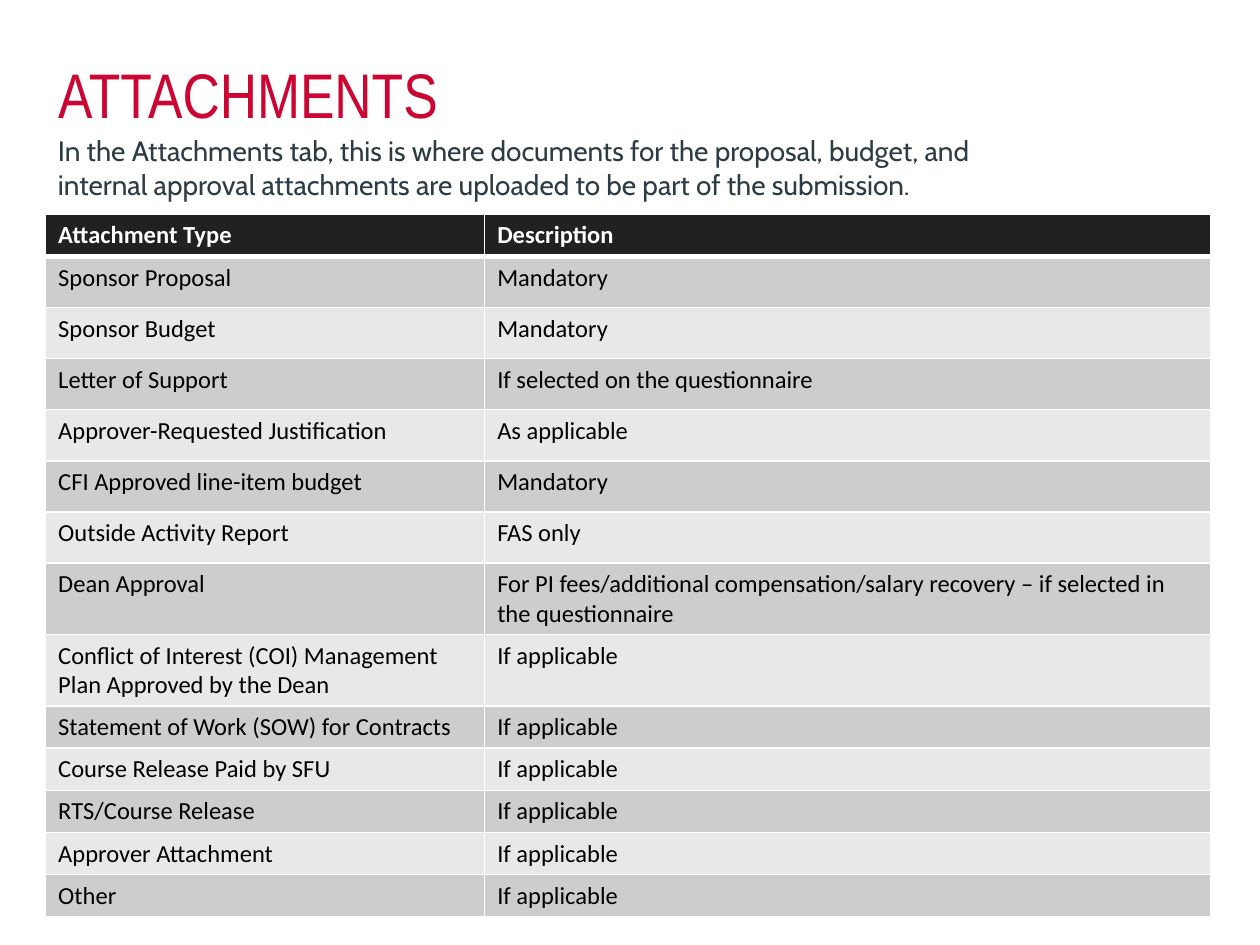
from lxml import etree
from pptx import Presentation
from pptx.dml.color import RGBColor
from pptx.enum.text import MSO_ANCHOR as Anchor, PP_ALIGN as Align
from pptx.oxml.ns import qn
from pptx.util import Cm, Pt

COLORS = {
    "red": "CC0633", "slate": "2D3B45", "black": "000000", "white": "FFFFFF",
    "header": "212121", "dark": "CDCDCD", "light": "E8E8E8",
}
SHORT, TALL, DOUBLE = 0.85, 1.03, 1.44
ROWS = [
    ("Attachment Type", "Description", SHORT),
    ("Sponsor Proposal", "Mandatory", TALL),
    ("Sponsor Budget", "Mandatory", TALL),
    ("Letter of Support", "If selected on the questionnaire", TALL),
    ("Approver-Requested Justification", "As applicable", TALL),
    ("CFI Approved line-item budget", "Mandatory", TALL),
    ("Outside Activity Report", "FAS only", TALL),
    ("Dean Approval", "For PI fees/additional compensation/salary recovery – "
     "if selected in the questionnaire", DOUBLE),
    ("Conflict of Interest (COI) Management Plan Approved by the Dean",
     "If applicable", DOUBLE),
    ("Statement of Work (SOW) for Contracts", "If applicable", SHORT),
    ("Course Release Paid by SFU", "If applicable", SHORT),
    ("RTS/Course Release", "If applicable", SHORT),
    ("Approver Attachment", "If applicable", SHORT),
    ("Other", "If applicable", SHORT),
]


def rgb(name):
    return RGBColor.from_string(COLORS[name])


def write(tf, text, font="Calibri", size=14, color="black", bold=False, spacing=None):
    tf.word_wrap = True
    p = tf.paragraphs[0]
    p.alignment = Align.LEFT
    if spacing:
        p.line_spacing = spacing
    r = p.add_run()
    r.text = text
    r.font.name, r.font.size, r.font.bold = font, Pt(size), bold
    r.font.color.rgb = rgb(color)


def set_borders(cell, bottom=1):
    """Draw white lines round a cell; they must precede its fill in the XML."""
    props = cell._tc.get_or_add_tcPr()
    for i, (side, width) in enumerate(zip("LRTB", (1, 1, 1, bottom))):
        ln = etree.Element(qn(f"a:ln{side}"), w=str(Pt(width)))
        fill = etree.SubElement(ln, qn("a:solidFill"))
        etree.SubElement(fill, qn("a:srgbClr"), val=COLORS["white"])
        props.insert(i, ln)


class Deck:
    def __init__(self):
        self.prs = Presentation()
        self.prs.slide_width, self.prs.slide_height = Cm(25.4), Cm(19.05)
        self.s = None

    def add_slide(self):
        self.s = self.prs.slides.add_slide(self.prs.slide_layouts[5])

    def title(self, text, x, y, w, h):
        sp = self.s.shapes.title
        sp.left, sp.top, sp.width, sp.height = Cm(x), Cm(y), Cm(w), Cm(h)
        sp.text_frame.vertical_anchor = Anchor.MIDDLE
        write(sp.text_frame, text, font="Arial Narrow", size=36, color="red", spacing=0.9)

    def text(self, text, x, y, w, h, **fmt):
        sp = self.s.shapes.add_textbox(Cm(x), Cm(y), Cm(w), Cm(h))
        write(sp.text_frame, text, **fmt)

    def table(self, rows, x, y, widths):
        height = sum(row[-1] for row in rows)
        table = self.s.shapes.add_table(len(rows), len(widths), Cm(x), Cm(y),
                                        Cm(sum(widths)), Cm(height)).table
        for col, width in zip(table.columns, widths):
            col.width = Cm(width)
        for i, (*texts, row_height) in enumerate(rows):
            table.rows[i].height = Cm(row_height)
            header = i == 0
            fill = "header" if header else "dark" if i % 2 else "light"
            for j, text in enumerate(texts):
                cell = table.cell(i, j)
                cell.fill.solid()
                cell.fill.fore_color.rgb = rgb(fill)
                set_borders(cell, bottom=3 if header else 1)
                write(cell.text_frame, text, bold=header,
                      color="white" if header else "black")


def main():
    deck = Deck()
    deck.add_slide()
    deck.title("ATTACHMENTS", 0.92, 1.02, 23.9, 1.93)
    deck.text("In the Attachments tab, this is where documents for the proposal, budget, "
              "and internal approval attachments are uploaded to be part of the submission.",
              0.92, 2.57, 20.45, 3.43, font="Cabin", size=16, color="slate")
    deck.table(ROWS, 0.92, 4.32, (8.85, 14.64))
    deck.prs.save("out.pptx")


if __name__ == "__main__":
    main()
